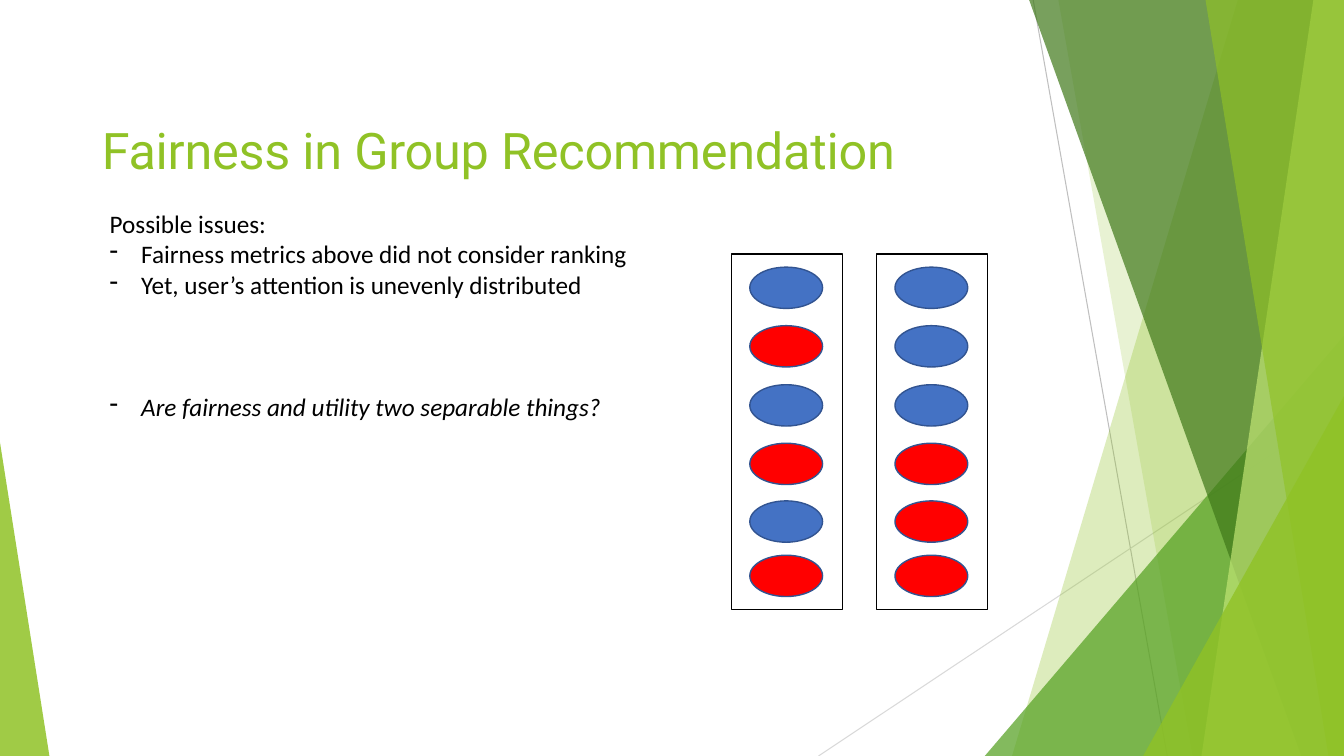
from lxml.etree import SubElement
from pptx import Presentation
from pptx.dml.color import RGBColor
from pptx.enum.shapes import MSO_CONNECTOR as Connector, MSO_SHAPE as Shape
from pptx.enum.text import MSO_ANCHOR as Anchor, MSO_AUTO_SIZE as AutoSize, PP_ALIGN as Align
from pptx.oxml.ns import qn
from pptx.util import Pt

COLOURS = {
    "white": "FFFFFF", "black": "000000", "lime": "90C226", "leaf": "54A021",
    "forest": "3F7819", "pale": "C0E474", "grey": "BFBFBF", "silver": "D9D9D9",
    "blue": "4472C4", "red": "FF0000", "outline": "325491",
}
WIDTH, HEIGHT = 960, 540

RAYS = [
    ("grey", (738, 0), (833.76, 540)),
    ("silver", (960, 290.16), (584.64, 540)),
]
FACETS = [
    ("lime", 30, [(884.16, 0), (960, 0), (960, 540), (722.88, 540)]),
    ("lime", 20, [(756, 0), (960, 0), (960, 540), (851.76, 540)]),
    ("leaf", 72, [(703.44, 540), (960, 239.76), (960, 540)]),
    ("forest", 70, [(735.12, 0), (960, 0), (960, 540), (929.52, 540)]),
    ("pale", 70, [(938.16, 0), (960, 0), (960, 540), (858.24, 540)]),
    ("lime", 65, [(861.12, 0), (960, 0), (960, 540), (948.96, 540)]),
    ("lime", 80, [(816.48, 540), (960, 282.96), (960, 540)]),
    ("lime", 85, [(0, 540), (0, 316.08), (35.28, 540)]),
]
ISSUES = [
    ("Possible issues:", {}),
    ("Fairness metrics above did not consider ranking", {"bullet": "-"}),
    ("Yet, user’s attention is unevenly distributed", {"bullet": "-"}),
    ("Are fairness and utility two separable things?",
     {"bullet": "-", "italic": True, "before": 65.5}),
]
RANKINGS = [
    ["blue", "red", "blue", "red", "blue", "red"],
    ["blue", "blue", "blue", "red", "red", "red"],
]
ITEM_TOPS = [9.4, 51.2, 93.4, 135.2, 176.4, 215.2]


def colour(name):
    """Return the named colour."""
    return RGBColor.from_string(COLOURS[name])


def write(paragraph, text, size=18, font="Calibri", ink="black", italic=False,
          bullet=None, indent=22.5, before=0, leading=None, tracking=None):
    """Add formatted text to a paragraph."""
    run = paragraph.add_run()
    run.text = text
    run.font.size, run.font.name, run.font.italic = Pt(size), font, italic
    run.font.color.rgb = colour(ink)
    paragraph.alignment = Align.LEFT
    paragraph.space_before = Pt(before)
    if leading:
        paragraph.line_spacing = Pt(leading)
    if tracking:
        run._r.get_or_add_rPr().set("spc", str(tracking))
    if bullet:
        properties = paragraph._p.get_or_add_pPr()
        properties.set("marL", str(Pt(indent)))
        properties.set("indent", str(-Pt(indent)))
        SubElement(properties, qn("a:buChar")).set("char", bullet)


def add_backdrop(slide):
    """Draw the thin rays and the translucent green facets."""
    for tint, start, end in RAYS:
        ray = slide.shapes.add_connector(
            Connector.STRAIGHT, *(Pt(value) for value in start + end))
        ray.line.color.rgb = colour(tint)
        ray.line.width = Pt(0.75)
        SubElement(ray._element.spPr, qn("a:effectLst"))
    for tint, opacity, corners in FACETS:
        first, *others = [(Pt(x), Pt(y)) for x, y in corners]
        outline = slide.shapes.build_freeform(*first)
        outline.add_line_segments(others, close=True)
        facet = outline.convert_to_shape()
        facet.shadow.inherit = False
        facet.fill.solid()
        facet.fill.fore_color.rgb = colour(tint)
        facet.line.fill.background()
        tint_xml = facet._element.spPr.find(qn("a:solidFill"))[0]
        SubElement(tint_xml, qn("a:alpha")).set("val", str(opacity * 1000))


def add_heading(slide, left, top, width, height):
    """Place and format the title placeholder."""
    heading = slide.shapes.title
    heading.left, heading.top = Pt(left), Pt(top)
    heading.width, heading.height = Pt(width), Pt(height)
    frame = heading.text_frame
    frame.auto_size, frame.vertical_anchor = AutoSize.NONE, Anchor.TOP
    frame.margin_left = frame.margin_right = frame.margin_bottom = 0
    frame.margin_top = Pt(19.4)
    write(frame.paragraphs[0], "Fairness in Group Recommendation", size=36,
          font="Roboto", ink="lime", leading=44.6, tracking=-17)
    properties = frame.paragraphs[0]._p.get_or_add_pPr()
    properties.set("marL", str(Pt(1.4)))


def add_issues(slide, left, top, width, height):
    """List the possible issues."""
    frame = slide.shapes.add_textbox(
        Pt(left), Pt(top), Pt(width), Pt(height)).text_frame
    frame.word_wrap = True
    for index, (text, style) in enumerate(ISSUES):
        paragraph = frame.add_paragraph() if index else frame.paragraphs[0]
        write(paragraph, text, **style)


def add_block(slide, kind, left, top, width, height, fill, edge):
    """Add a filled and outlined shape."""
    block = slide.shapes.add_shape(kind, Pt(left), Pt(top), Pt(width), Pt(height))
    block.shadow.inherit = False
    block.fill.solid()
    block.fill.fore_color.rgb = colour(fill)
    block.line.color.rgb = colour(edge)
    block.line.width = Pt(1)


def add_ranking(slide, left, top, width, height, items):
    """Draw one ranked list of items inside its frame."""
    add_block(slide, Shape.RECTANGLE, left, top, width, height, "white", "black")
    for item, offset in zip(items, ITEM_TOPS):
        add_block(slide, Shape.OVAL, left + 13, top + offset, 52, 29.5,
                  item, "outline")


def main():
    """Build and save the slide."""
    deck = Presentation()
    deck.slide_width, deck.slide_height = Pt(WIDTH), Pt(HEIGHT)
    slide = deck.slides.add_slide(deck.slide_layouts.get_by_name("Title Only"))
    add_backdrop(slide)
    add_heading(slide, 71.3, 64, 903, 62)
    add_issues(slide, 71.3, 145.4, 571, 181.4)
    for column, items in enumerate(RANKINGS):
        add_ranking(slide, 522.6 + column * 103.7, 181.4, 79.2, 254.2, items)
    deck.save("out.pptx")


if __name__ == "__main__":
    main()
